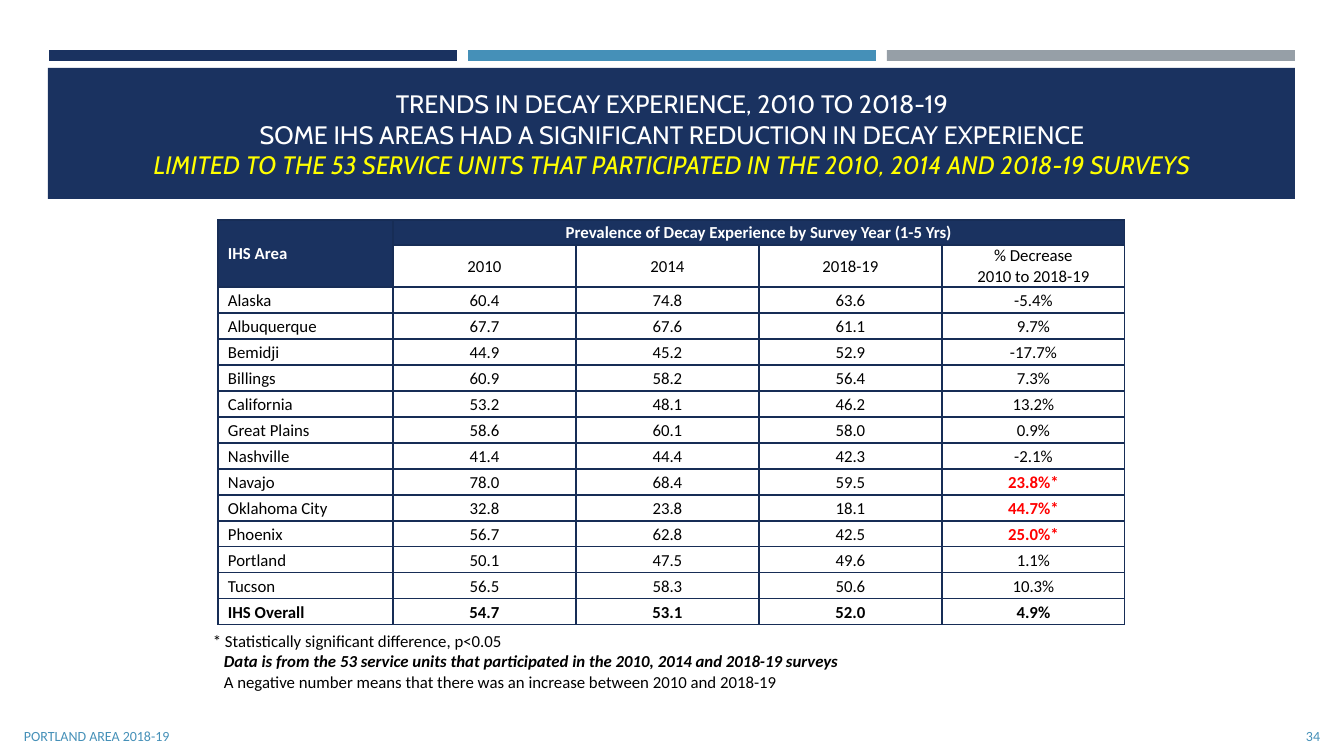
from lxml import etree
from pptx import Presentation
from pptx import util as u
from pptx.dml.color import RGBColor
from pptx.enum import shapes, text
from pptx.oxml import ns

PX = u.Inches(7.5) / 756
NAVY, BLUE, GREY, RULE = "1A3260", "4590B8", "969FA7", "172D56"
WHITE, BLACK, YELLOW, RED = "FFFFFF", "000000", "FFFF00", "FF0000"
LEFT, CENTER, RIGHT = text.PP_ALIGN.LEFT, text.PP_ALIGN.CENTER, text.PP_ALIGN.RIGHT

TITLE_LINES = [
    ("TRENDS IN DECAY EXPERIENCE, 2010 TO 2018-19", WHITE, False),
    ("SOME IHS AREAS HAD A SIGNIFICANT REDUCTION IN DECAY EXPERIENCE", WHITE, False),
    ("LIMITED TO THE 53 SERVICE UNITS THAT PARTICIPATED IN THE 2010, 2014 AND 2018-19 SURVEYS",
     YELLOW, True),
]
HEADINGS = [
    ("IHS Area", "Prevalence of Decay Experience by Survey Year (1-5 Yrs)", "", "", ""),
    ("", "2010", "2014", "2018-19", "% Decrease\n2010 to 2018-19"),
]
AREAS = [
    ("Alaska", "60.4", "74.8", "63.6", "-5.4%"),
    ("Albuquerque", "67.7", "67.6", "61.1", "9.7%"),
    ("Bemidji", "44.9", "45.2", "52.9", "-17.7%"),
    ("Billings", "60.9", "58.2", "56.4", "7.3%"),
    ("California", "53.2", "48.1", "46.2", "13.2%"),
    ("Great Plains", "58.6", "60.1", "58.0", "0.9%"),
    ("Nashville", "41.4", "44.4", "42.3", "-2.1%"),
    ("Navajo", "78.0", "68.4", "59.5", "23.8%*"),
    ("Oklahoma City", "32.8", "23.8", "18.1", "44.7%*"),
    ("Phoenix", "56.7", "62.8", "42.5", "25.0%*"),
    ("Portland", "50.1", "47.5", "49.6", "1.1%"),
    ("Tucson", "56.5", "58.3", "50.6", "10.3%"),
    ("IHS Overall", "54.7", "53.1", "52.0", "4.9%"),
]
# text, indent in px, bold italic
NOTES = [
    ("* Statistically significant difference, p<0.05", 0, False),
    ("Data is from the 53 service units that participated in the 2010, 2014 and 2018-19 surveys",
     11, True),
    ("A negative number means that there was an increase between 2010 and 2018-19", 11, False),
]


def px(*lengths):
    return [round(length * PX) for length in lengths]


def rgb(hex_colour):
    return RGBColor.from_string(hex_colour)


class Deck:
    def __init__(self, font, size):
        self.font, self.size = font, size
        self.prs = Presentation()
        self.prs.slide_width, self.prs.slide_height = px(1344, 756)
        self.slide = self.prs.slides.add_slide(self.prs.slide_layouts[5])

    def run(self, paragraph, words, colour=BLACK, bold=False, italic=False, size=None, font=None):
        run = paragraph.add_run()
        run.text = words
        run.font.name = font or self.font
        run.font.size = u.Pt(size or self.size)
        run.font.bold, run.font.italic = bold, italic
        run.font.color.rgb = rgb(colour)

    def bar(self, box, colour):
        bar = self.slide.shapes.add_shape(shapes.MSO_SHAPE.RECTANGLE, *px(*box))
        bar.shadow.inherit = False
        bar.fill.solid()
        bar.fill.fore_color.rgb = rgb(colour)
        bar.line.fill.background()

    def title(self, box, lines, font, size):
        title = self.slide.shapes.title
        title.left, title.top, title.width, title.height = px(*box)
        # The title is created first, so bring it in front of its band
        title.element.getparent().append(title.element)
        frame = title.text_frame
        frame.word_wrap, frame.auto_size = True, text.MSO_AUTO_SIZE.NONE
        frame.vertical_anchor = text.MSO_ANCHOR.MIDDLE
        heading = frame.paragraphs[0]
        heading.alignment = CENTER
        for i, (words, colour, italic) in enumerate(lines):
            if i:
                heading.add_line_break()
            self.run(heading, words, colour, italic=italic, size=size, font=font)

    def label(self, box, words, align):
        frame = self.slide.shapes.add_textbox(*px(*box)).text_frame
        frame.word_wrap = True
        frame.vertical_anchor = text.MSO_ANCHOR.MIDDLE
        frame.paragraphs[0].alignment = align
        self.run(frame.paragraphs[0], words, BLUE, size=10)

    def notes(self, box, lines):
        frame = self.slide.shapes.add_textbox(*px(*box)).text_frame
        frame.word_wrap = False
        for i, (words, indent, strong) in enumerate(lines):
            note = frame.add_paragraph() if i else frame.paragraphs[0]
            note.alignment = LEFT
            note._p.get_or_add_pPr().set("marL", str(px(indent)[0]))
            self.run(note, words, bold=strong, italic=strong)

    def borders(self, cell):
        props = cell._tc.get_or_add_tcPr()
        for side in ("L", "R", "T", "B"):
            line = etree.SubElement(props, ns.qn(f"a:ln{side}"), w=str(u.Pt(1)))
            fill = etree.SubElement(line, ns.qn("a:solidFill"))
            etree.SubElement(fill, ns.qn("a:srgbClr"), val=RULE)

    def cell(self, cell, words, align, colour, bold, fill):
        self.borders(cell)
        if fill:
            cell.fill.solid()
            cell.fill.fore_color.rgb = rgb(fill)
        else:
            cell.fill.background()
        side = 1 if align == CENTER else 10
        cell.margin_left, cell.margin_top, cell.margin_right, cell.margin_bottom = px(side, 1, side, 0)
        cell.vertical_anchor = text.MSO_ANCHOR.MIDDLE
        for i, words_line in enumerate(words.split("\n") if words else []):
            frame = cell.text_frame
            paragraph = frame.add_paragraph() if i else frame.paragraphs[0]
            paragraph.alignment = align
            self.run(paragraph, words_line, colour, bold)

    def table(self, left, top, widths, heights, rows):
        """Fill the grid; a starred value is significant and the last row is the total."""
        box = px(left, top, sum(widths), sum(heights))
        table = self.slide.shapes.add_table(len(rows), len(widths), *box).table
        table.first_row = table.horz_banding = False
        for column, width in zip(table.columns, px(*widths)):
            column.width = width
        for row, height in zip(table.rows, px(*heights)):
            row.height = height
        for r, values in enumerate(rows):
            for c, words in enumerate(values):
                heading = r == 0 or (r == 1 and c == 0)
                significant = words.endswith("*")
                colour = WHITE if heading else RED if significant else BLACK
                bold = heading or significant or r == len(rows) - 1
                self.cell(table.cell(r, c), words, CENTER if c else LEFT,
                          colour, bold, NAVY if heading else None)
        table.cell(0, 0).merge(table.cell(1, 0))
        table.cell(0, 1).merge(table.cell(0, len(widths) - 1))


def main():
    deck = Deck("Calibri", 12)
    for i, colour in enumerate((NAVY, BLUE, GREY)):
        deck.bar((49 + 419 * i, 50, 408, 11), colour)
    deck.bar((48, 68, 1247, 131), NAVY)
    deck.title((64, 78, 1216, 112), TITLE_LINES, "Cabin", 18)
    deck.table(218, 220, [175] + [183] * 4, [25, 42] + [26] * len(AREAS), HEADINGS + AREAS)
    deck.label((14, 716, 762, 40), "PORTLAND AREA 2018-19", LEFT)
    deck.label((1214, 716, 116, 40), "34", RIGHT)
    deck.notes((203, 626, 656, 72), NOTES)
    deck.prs.save("out.pptx")


if __name__ == "__main__":
    main()
